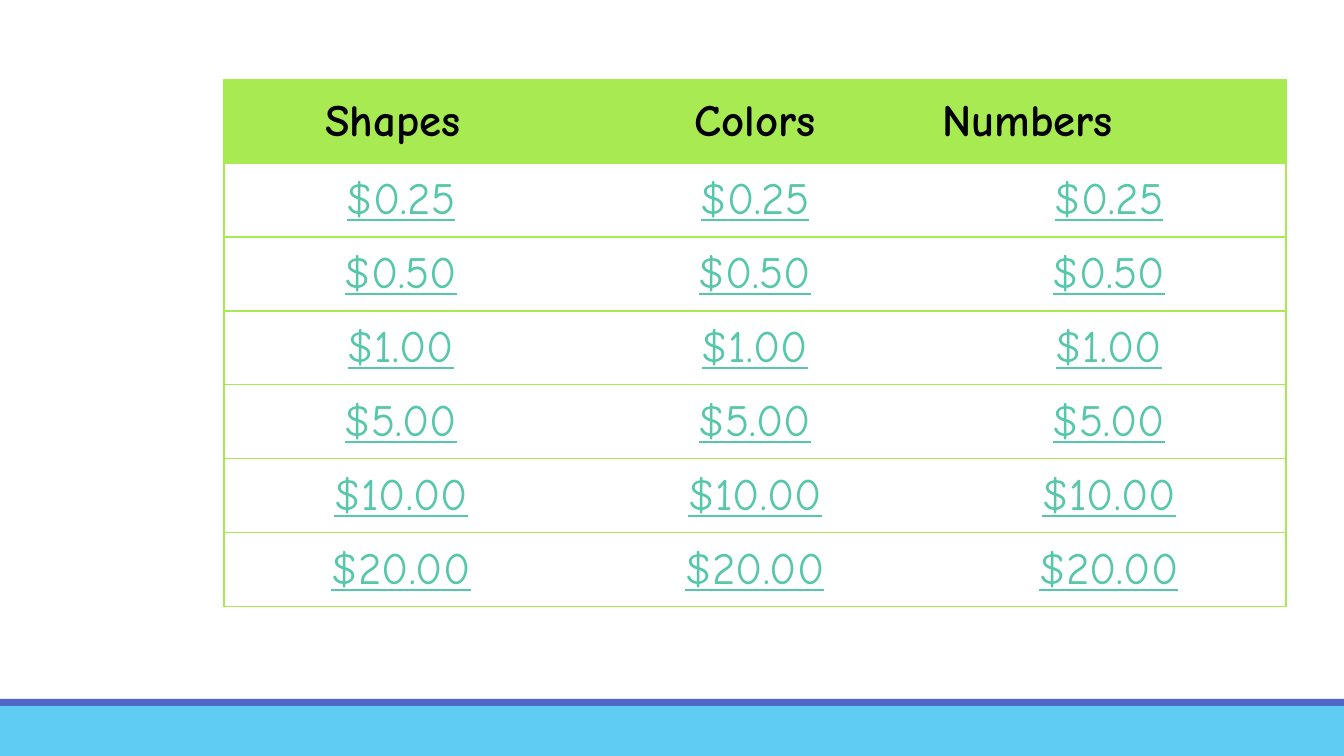
from lxml import etree
from pptx import Presentation
from pptx.dml.color import RGBColor
from pptx.enum.shapes import MSO_SHAPE
from pptx.enum.text import MSO_ANCHOR, PP_ALIGN
from pptx.oxml.ns import qn
from pptx.util import Emu, Pt

RECT = MSO_SHAPE.RECTANGLE
MIDDLE = MSO_ANCHOR.MIDDLE
LEFT, CENTER = PP_ALIGN.LEFT, PP_ALIGN.CENTER

SCALE = 914400 / 100.8
SLIDE_W, SLIDE_H = 1344, 756
GREEN, BLACK, TEAL = "A7EA52", "000000", "56C7AA"
SKY, INDIGO = "5ECCF3", "4E67C8"

HEADERS = [("Shapes ", CENTER), ("Colors", CENTER), ("Numbers", LEFT)]
PRIZES = ["$0.25", "$0.50", "$1.00", "$5.00", "$10.00", "$20.00"]
HEADER_FONT = {"name": "Comic Neue", "size": Pt(32), "bold": True}
PRIZE_FONT = {"name": "Comic Neue", "size": Pt(32), "bold": False, "underline": True}


def px(n):
    return Emu(round(n * SCALE))


def rgb(value):
    return RGBColor.from_string(value)


def add_band(slide, x, y, w, h, color):
    sp = slide.shapes.add_shape(RECT, px(x), px(y), px(w), px(h))
    sp.shadow.inherit = False
    sp.fill.solid()
    sp.fill.fore_color.rgb = rgb(color)
    sp.line.fill.background()


def add_footer(slide, x, y, w, h):
    stripe_h = 7
    add_band(slide, x, y + stripe_h, w, h - stripe_h, SKY)
    add_band(slide, x, y, w, stripe_h, INDIGO)


def set_borders(cell, sides):
    """Draw the sides named in the string, of L, R, T and B, and hide the others."""
    tc_pr = cell._tc.get_or_add_tcPr()
    for i, side in enumerate("LRTB"):
        ln = etree.Element(qn(f"a:ln{side}"), w=str(Pt(1)))
        if side in sides:
            fill = etree.SubElement(ln, qn("a:solidFill"))
            etree.SubElement(fill, qn("a:srgbClr"), val=GREEN)
        else:
            etree.SubElement(ln, qn("a:noFill"))
        tc_pr.insert(i, ln)


def write_cell(cell, text, align, font, color):
    cell.vertical_anchor = MIDDLE
    p = cell.text_frame.paragraphs[0]
    p.alignment = align
    r = p.add_run()
    r.text = text
    for name, value in font.items():
        setattr(r.font, name, value)
    r.font.color.rgb = rgb(color)


def add_prize_board(slide, x, y, w, h, header_h):
    n_rows, n_cols = len(PRIZES) + 1, len(HEADERS)
    row_h = (h - header_h) / len(PRIZES)
    table = slide.shapes.add_table(n_rows, n_cols, px(x), px(y), px(w), px(h)).table
    table.horz_banding = False
    for col in table.columns:
        col.width = px(w / n_cols)
    for i, row in enumerate(table.rows):
        row.height = px(row_h if i else header_h)
        for j, (header, align) in enumerate(HEADERS):
            cell = row.cells[j]
            if i:
                cell.fill.background()
                write_cell(cell, PRIZES[i - 1], CENTER, PRIZE_FONT, TEAL)
            else:
                cell.fill.solid()
                cell.fill.fore_color.rgb = rgb(GREEN)
                write_cell(cell, header, align, HEADER_FONT, BLACK)
            outer = {0: "L", n_cols - 1: "R"}.get(j, "")
            set_borders(cell, "TB" + outer)


def main():
    prs = Presentation()
    prs.slide_width, prs.slide_height = px(SLIDE_W), px(SLIDE_H)
    slide = prs.slides.add_slide(prs.slide_layouts[6])
    add_footer(slide, 0, 699, SLIDE_W, SLIDE_H - 699)
    add_prize_board(slide, 224, 80, 1062, 527, header_h=83)
    prs.save("out.pptx")


if __name__ == "__main__":
    main()
